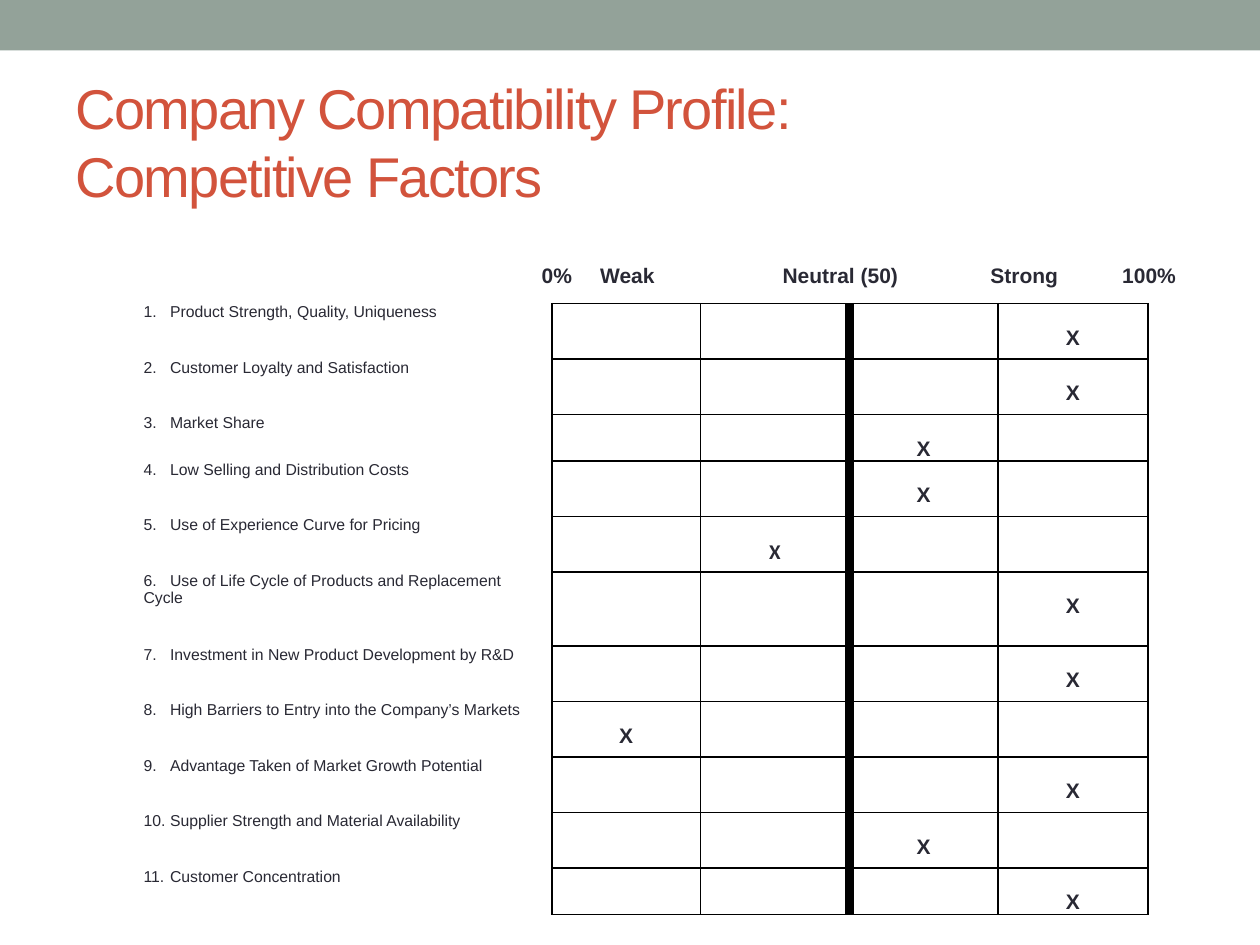
from lxml import etree
from pptx import Presentation
from pptx.dml.color import RGBColor
from pptx.enum.shapes import MSO_SHAPE
from pptx.enum.text import MSO_ANCHOR, PP_ALIGN
from pptx.oxml.ns import qn
from pptx.util import Inches, Pt

RECTANGLE = MSO_SHAPE.RECTANGLE
MIDDLE, TOP = MSO_ANCHOR.MIDDLE, MSO_ANCHOR.TOP
LEFT, CENTER = PP_ALIGN.LEFT, PP_ALIGN.CENTER

SAGE = RGBColor(0x93, 0xA2, 0x99)
RUST = RGBColor(0xD2, 0x53, 0x3C)
INK = RGBColor(0x29, 0x29, 0x34)
BLACK = RGBColor(0, 0, 0)

# Content
TITLE = "Company Compatibility Profile: \vCompetitive Factors"
# Scale label and the slide position of its centre
SCALE = [("0%", 4.42), ("Weak", 4.98), ("Neutral (50)", 6.67),
         ("Strong", 8.13), ("100%", 9.12)]
# Factor, column of its mark (1 = weakest, 4 = strongest), row height
FACTORS = [
    ("Product Strength, Quality, Uniqueness", 4, 0.44),
    ("Customer Loyalty and Satisfaction", 4, 0.44),
    ("Market Share", 3, 0.37),
    ("Low Selling and Distribution Costs", 3, 0.44),
    ("Use of Experience Curve for Pricing", 2, 0.44),
    ("Use of Life Cycle of Products and Replacement Cycle", 4, 0.59),
    ("Investment in New Product Development by R&D", 4, 0.44),
    ("High Barriers to Entry into the Company’s Markets", 1, 0.44),
    ("Advantage Taken of Market Growth Potential", 4, 0.44),
    ("Supplier Strength and Material Availability", 3, 0.44),
    ("Customer Concentration", 4, 0.37),
]
CALIBRI_ROW = 5
COLUMN_WIDTHS = [3.3, 1.18, 1.18, 1.18, 1.19]
TABLE_LEFT, TABLE_TOP = 1.08, 2.41
THIN, THICK = 1, 6

LABEL_FONT = {"name": "Arial", "size": Pt(9), "bold": False}
MARK_FONT = {"name": "Arial", "size": Pt(12), "bold": True}
TITLE_FONT = {"name": "Arial", "size": Pt(32), "bold": False}


def set_all(target, values):
    for name, value in values.items():
        setattr(target, name, value)


def write(paragraph, text, font, color, align=LEFT):
    paragraph.text = text
    paragraph.alignment = align
    for run in paragraph.runs:
        set_all(run.font, font)
        run.font.color.rgb = color


def set_tabs(paragraph, positions, align):
    tab_list = etree.SubElement(paragraph._p.get_or_add_pPr(), qn("a:tabLst"))
    for position in positions:
        etree.SubElement(tab_list, qn("a:tab"),
                         pos=str(Inches(position)), algn=align)


def set_borders(cell, widths):
    """Widths in points for left, right, top, bottom; 0 means no line."""
    properties = cell._tc.get_or_add_tcPr()
    for index, (side, width) in enumerate(zip("LRTB", widths)):
        line = etree.Element(qn(f"a:ln{side}"), w=str(Pt(width)))
        if width:
            fill = etree.SubElement(line, qn("a:solidFill"))
            etree.SubElement(fill, qn("a:srgbClr"), val=str(BLACK))
        else:
            etree.SubElement(line, qn("a:noFill"))
        properties.insert(index, line)


def borders_for(column):
    if column == 0:
        return 0, THIN, 0, 0
    return (THICK if column == 3 else THIN, THICK if column == 2 else THIN,
            THIN, THIN)


def add_band(slide):
    band = slide.shapes.add_shape(RECTANGLE, 0, 0, Inches(10), Inches(0.4))
    band.shadow.inherit = False
    band.fill.solid()
    band.fill.fore_color.rgb = SAGE
    band.line.fill.background()


def add_title(slide):
    title = slide.shapes.title
    set_all(title, {"left": Inches(0.5), "top": Inches(0.58),
                    "width": Inches(9), "height": Inches(1.08)})
    title.text_frame.vertical_anchor = MIDDLE
    paragraph = title.text_frame.paragraphs[0]
    write(paragraph, TITLE, TITLE_FONT, RUST)
    for run in paragraph.runs:
        run.font._element.set("spc", "-100")


def add_scale(slide):
    box = slide.shapes.add_textbox(Inches(TABLE_LEFT), Inches(2.03),
                                   Inches(8.5), Inches(0.3))
    set_all(box.text_frame, {"word_wrap": True, "vertical_anchor": MIDDLE,
                             "margin_left": 0, "margin_right": 0})
    paragraph = box.text_frame.paragraphs[0]
    write(paragraph, "".join(f"\t{label}" for label, _ in SCALE),
          MARK_FONT, INK)
    set_tabs(paragraph, [center - TABLE_LEFT for _, center in SCALE], "ctr")


def add_profile(slide):
    heights = [height for _, _, height in FACTORS]
    table = slide.shapes.add_table(
        len(FACTORS), len(COLUMN_WIDTHS), Inches(TABLE_LEFT),
        Inches(TABLE_TOP), Inches(sum(COLUMN_WIDTHS)),
        Inches(sum(heights))).table
    set_all(table, {"first_row": False, "horz_banding": False})
    for column, width in zip(table.columns, COLUMN_WIDTHS):
        column.width = Inches(width)

    for number, (factor, mark_column, height) in enumerate(FACTORS, 1):
        row = table.rows[number - 1]
        row.height = Inches(height)
        for column, cell in enumerate(row.cells):
            # Marks sit one text line below the row's top edge
            drop = Inches(0.18) if column == mark_column else 0
            set_all(cell, {"margin_left": Inches(0.06),
                           "margin_right": Inches(0.06), "margin_top": drop,
                           "margin_bottom": 0, "vertical_anchor": TOP})
            cell.fill.background()
            set_borders(cell, borders_for(column))
            paragraph = cell.text_frame.paragraphs[0]
            if column == 0:
                write(paragraph, f"{number}.\t{factor}", LABEL_FONT, INK)
                set_tabs(paragraph, [0.21], "l")
            elif column == mark_column:
                face = "Calibri" if number == CALIBRI_ROW else "Arial"
                write(paragraph, "X", {**MARK_FONT, "name": face}, INK, CENTER)
            else:
                paragraph.font.size = Pt(12)


def main():
    deck = Presentation()
    deck.slide_width, deck.slide_height = Inches(10), Inches(7.5)
    slide = deck.slides.add_slide(deck.slide_layouts.get_by_name("Title Only"))
    add_band(slide)
    add_profile(slide)
    add_scale(slide)
    add_title(slide)
    deck.save("out.pptx")


if __name__ == "__main__":
    main()
